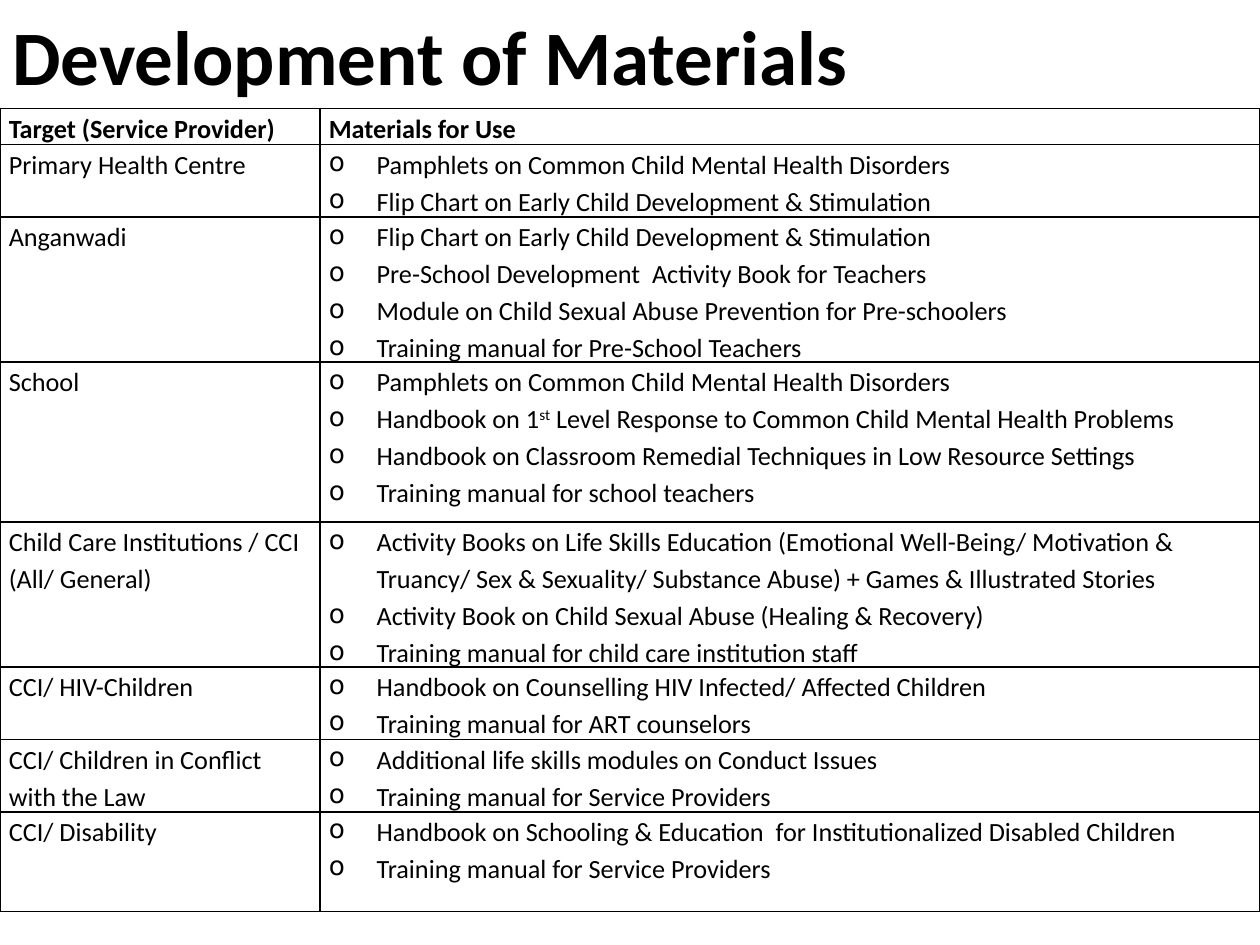
from dataclasses import dataclass

from lxml.etree import SubElement
from pptx import Presentation
from pptx.dml.color import RGBColor
from pptx.enum.text import MSO_ANCHOR
from pptx.oxml.ns import qn
from pptx.util import Inches, Pt

BLACK = RGBColor(0x00, 0x00, 0x00)
FONT = "Calibri"
COLUMN_WIDTHS = (2.54, 7.46)
HEADERS = ("Target (Service Provider)", "Materials for Use")
HEADER_HEIGHT = 0.28


@dataclass(frozen=True)
class Provider:
    """A service provider, its materials and its row height in inches."""
    name: str
    height: float
    materials: tuple[str, ...]


PROVIDERS = (
    Provider("Primary Health Centre", 0.57, (
        "Pamphlets on Common Child Mental Health Disorders",
        "Flip Chart on Early Child Development & Stimulation",
    )),
    Provider("Anganwadi", 1.14, (
        "Flip Chart on Early Child Development & Stimulation",
        "Pre-School Development  Activity Book for Teachers",
        "Module on Child Sexual Abuse Prevention for Pre-schoolers",
        "Training manual for Pre-School Teachers",
    )),
    Provider("School", 1.27, (
        "Pamphlets on Common Child Mental Health Disorders",
        "Handbook on 1^st^ Level Response to Common Child Mental Health Problems",
        "Handbook on Classroom Remedial Techniques in Low Resource Settings",
        "Training manual for school teachers",
    )),
    Provider("Child Care Institutions / CCI (All/ General)", 1.14, (
        "Activity Books on Life Skills Education (Emotional Well-Being/ Motivation & "
        "Truancy/ Sex & Sexuality/ Substance Abuse) + Games & Illustrated Stories",
        "Activity Book on Child Sexual Abuse (Healing & Recovery)",
        "Training manual for child care institution staff",
    )),
    Provider("CCI/ HIV-Children", 0.57, (
        "Handbook on Counselling HIV Infected/ Affected Children",
        "Training manual for ART counselors",
    )),
    Provider("CCI/ Children in Conflict with the Law", 0.57, (
        "Additional life skills modules on Conduct Issues",
        "Training manual for Service Providers",
    )),
    Provider("CCI/ Disability", 0.79, (
        "Handbook on Schooling & Education  for Institutionalized Disabled Children",
        "Training manual for Service Providers",
    )),
)


def write(p, text: str, *, size: float = 15, bold: bool = False,
          bullet: bool = False, spacing: float = 1.15) -> None:
    """Write a paragraph, raising the parts between carets."""
    if bullet:
        pPr = p._p.get_or_add_pPr()
        pPr.set("marL", str(Inches(0.38)))
        pPr.set("indent", str(-Inches(0.38)))
        SubElement(pPr, qn("a:buChar")).set("char", "o")
    p.line_spacing = spacing
    for i, part in enumerate(text.split("^")):
        r = p.add_run()
        r.text = part
        r.font.name, r.font.size, r.font.bold = FONT, Pt(size), bold
        r.font.color.rgb = BLACK
        if i % 2:
            r._r.get_or_add_rPr().set("baseline", "30000")


def add_border(cell) -> None:
    """Draw a thin black line on every side of a cell."""
    tcPr = cell._tc.get_or_add_tcPr()
    for side in ("lnL", "lnR", "lnT", "lnB"):
        ln = SubElement(tcPr, qn(f"a:{side}"), w=str(Pt(1)))
        fill = SubElement(ln, qn("a:solidFill"))
        SubElement(fill, qn("a:srgbClr"), val=str(BLACK))


def fill_cell(cell, lines: tuple[str, ...], *, bold: bool = False,
              bullet: bool = False) -> None:
    """Format a cell and write one paragraph per line."""
    cell.margin_left = cell.margin_right = Inches(0.07)
    cell.margin_top = cell.margin_bottom = Inches(0)
    add_border(cell)
    cell.fill.background()
    tf = cell.text_frame
    for i, line in enumerate(lines):
        p = tf.add_paragraph() if i else tf.paragraphs[0]
        write(p, line, bold=bold, bullet=bullet)


def add_title(s, text: str) -> None:
    """Add the slide title."""
    sp = s.shapes.add_textbox(Inches(0), Inches(0), Inches(9), Inches(0.87))
    tf = sp.text_frame
    tf.word_wrap = True
    tf.vertical_anchor = MSO_ANCHOR.MIDDLE
    write(tf.paragraphs[0], text, size=44, bold=True, spacing=1.0)


def add_materials_table(s) -> None:
    """Add the table of providers and their materials."""
    heights = (HEADER_HEIGHT, *(provider.height for provider in PROVIDERS))
    table = s.shapes.add_table(
        len(heights), len(COLUMN_WIDTHS), Inches(0), Inches(0.86),
        Inches(sum(COLUMN_WIDTHS)), Inches(sum(heights))).table
    table.first_row = table.horz_banding = False
    for column, width in zip(table.columns, COLUMN_WIDTHS):
        column.width = Inches(width)
    for row, height in zip(table.rows, heights):
        row.height = Inches(height)
    for col, header in enumerate(HEADERS):
        fill_cell(table.cell(0, col), (header,), bold=True)
    for row, provider in enumerate(PROVIDERS, start=1):
        fill_cell(table.cell(row, 0), (provider.name,))
        fill_cell(table.cell(row, 1), provider.materials, bullet=True)


def main() -> None:
    """Build and save the slide."""
    prs = Presentation()
    prs.slide_width, prs.slide_height = Inches(10), Inches(7.5)
    s = prs.slides.add_slide(prs.slide_layouts[6])
    add_title(s, "Development of Materials")
    add_materials_table(s)
    prs.save("out.pptx")


if __name__ == "__main__":
    main()
